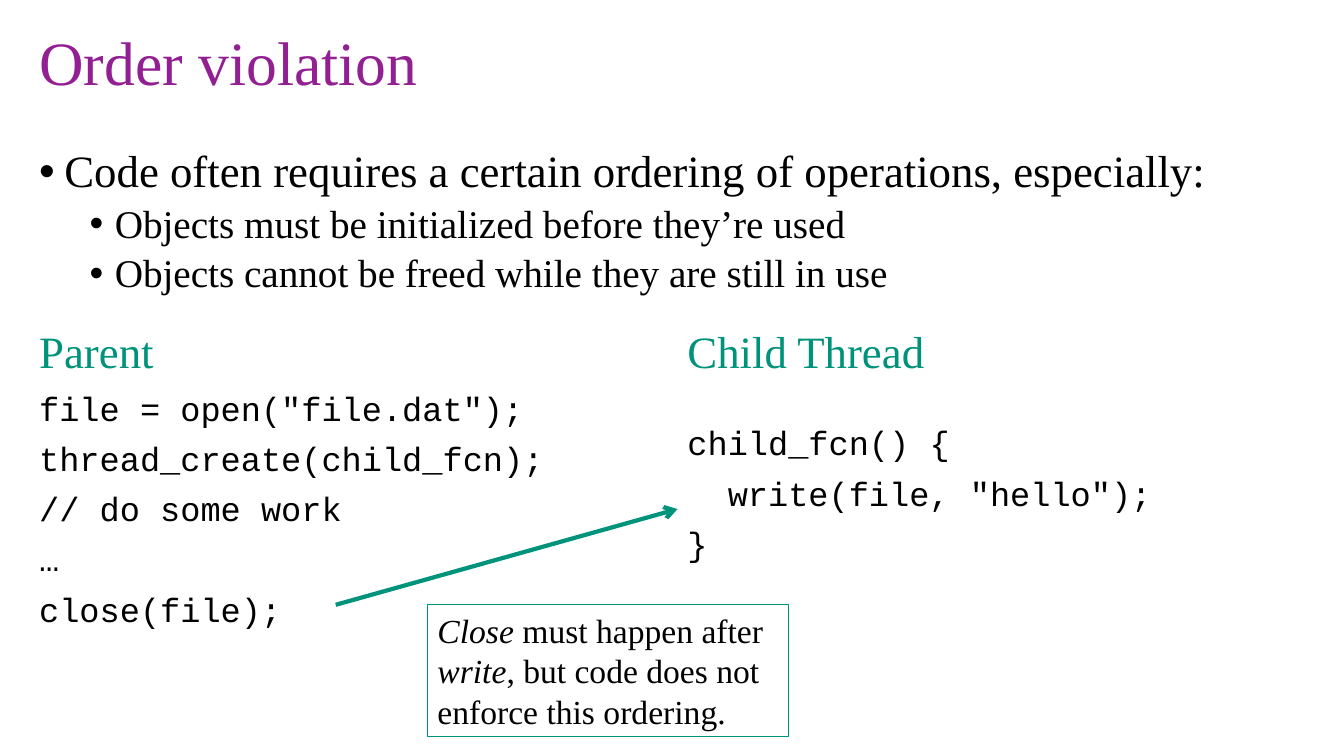
from lxml import etree
from pptx import Presentation
from pptx.dml.color import RGBColor
from pptx.enum.shapes import MSO_CONNECTOR, MSO_SHAPE
from pptx.enum.text import MSO_ANCHOR, MSO_AUTO_SIZE, PP_ALIGN
from pptx.oxml.ns import qn
from pptx.util import Inches, Pt

LEFT, MIDDLE, TOP = PP_ALIGN.LEFT, MSO_ANCHOR.MIDDLE, MSO_ANCHOR.TOP
FIXED = MSO_AUTO_SIZE.NONE
RECT, LINE = MSO_SHAPE.RECTANGLE, MSO_CONNECTOR.STRAIGHT
SERIF, MONO = "Times New Roman", "Courier New"
PURPLE, GREEN, BLACK, WHITE = "932092", "00937B", "000000", "FFFFFF"

# Content
TITLE = "Order violation"
POINTS = [  # level, text
    (0, "Code often requires a certain ordering of operations, especially:"),
    (1, "Objects must be initialized before they’re used"),
    (1, "Objects cannot be freed while they are still in use"),
]
THREADS = [  # box, heading, extra gap in points, code as (indent, text)
    ((0.29, 3.22, 5.84, 4.05), "Parent", 0, [
        (0, 'file = open("file.dat");'),
        (0, "thread_create(child_fcn);"),
        (0, "// do some work"),
        (0, "…"),
        (0, "close(file);"),
    ]),
    ((6.72, 3.22, 6.13, 2.9), "Child Thread", 25, [
        (0, "child_fcn() {"),
        (0.4, 'write(file, "hello");'),
        (0, "}"),
    ]),
]
NOTE = [  # text, italic
    ("Close", True),
    (" must happen after ", False),
    ("write", True),
    (", but code does not enforce this ordering.", False),
]


def color(code):
    return RGBColor.from_string(code)


def style(font, size, name=SERIF, code=BLACK):
    font.size, font.name = Pt(size), name
    font.color.rgb = color(code)


def setup(frame, anchor=TOP):
    frame.word_wrap = True
    frame.auto_size = FIXED
    frame.vertical_anchor = anchor


def add_box(box):
    frame = slide.shapes.add_textbox(*map(Inches, box)).text_frame
    setup(frame)
    return frame


def add_line(frame, text, gap, indent=0, bullet=False):
    """Fill the first empty paragraph, or add one."""
    para = frame.paragraphs[0]
    if para.text:
        para = frame.add_paragraph()
    para.text = text
    para.alignment = LEFT
    para.line_spacing, para.space_before = 0.9, Pt(gap)
    props = para._p.get_or_add_pPr()
    props.set("marL", str(Inches(indent)))
    if bullet:
        props.set("indent", str(Inches(-0.25)))
        font = etree.SubElement(props, qn("a:buFont"))
        font.set("typeface", "Arial")
        etree.SubElement(props, qn("a:buChar")).set("char", "•")
    return para


deck = Presentation()
deck.slide_width, deck.slide_height = Inches(13.33), Inches(7.5)
slide = deck.slides.add_slide(deck.slide_layouts[5])

# Title
title = slide.shapes.title
title.left, title.top, title.width, title.height = map(
    Inches, (0.29, 0.17, 12.73, 0.97))
setup(title.text_frame, MIDDLE)
para = add_line(title.text_frame, TITLE, 0)
style(para.font, 44, code=PURPLE)

# Bullet points
frame = add_box((0.29, 1.43, 12.73, 1.66))
for level, text in POINTS:
    para = add_line(frame, text, 10 - 5 * level, 0.25 + 0.5 * level, True)
    para.level = level
    style(para.font, 32 - 4 * level)

# Code of the two threads
for box, head, extra, code in THREADS:
    frame = add_box(box)
    style(add_line(frame, head, 10).font, 32, code=GREEN)
    for row, (indent, text) in enumerate(code):
        gap = 10 if row else 10 + extra
        style(add_line(frame, text, gap, indent).font, 24, MONO)

# Arrow from close to write
arrow = slide.shapes.add_connector(
    LINE, *map(Inches, (3.33, 6, 6.72, 5.05)))
arrow.line.color.rgb, arrow.line.width = color(GREEN), Pt(3)
etree.SubElement(arrow.line._get_or_add_ln(), qn("a:tailEnd")).set(
    "type", "arrow")
etree.SubElement(arrow._element.spPr, qn("a:effectLst"))

# Boxed note
note = slide.shapes.add_shape(RECT, *map(Inches, (4.24, 6, 3.58, 1.31)))
note.shadow.inherit = False
note.fill.solid()
note.fill.fore_color.rgb = color(WHITE)
note.line.color.rgb, note.line.width = color(GREEN), Pt(0.75)
setup(note.text_frame)
para = note.text_frame.paragraphs[0]
para.alignment = LEFT
style(para.font, 24)
for text, slant in NOTE:
    run = para.add_run()
    run.text, run.font.italic = text, slant
    run.font.color.rgb = color(BLACK)

deck.save("out.pptx")
